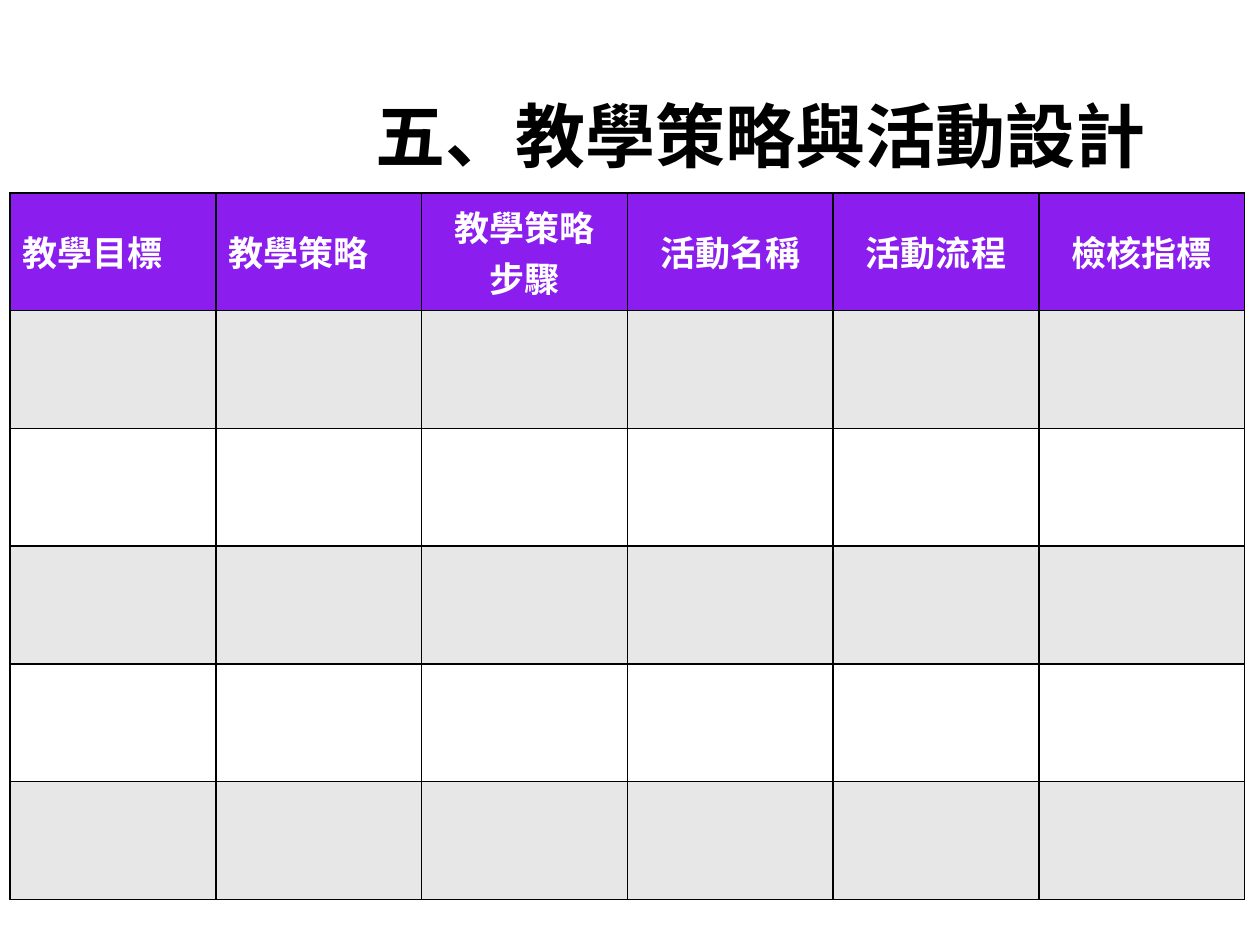
import dataclasses
import typing

import pptx
import pptx.dml.color
import pptx.enum.text
import pptx.oxml
import pptx.oxml.ns
import pptx.util

ALIGN = pptx.enum.text.PP_ALIGN
MIDDLE = pptx.enum.text.MSO_ANCHOR.MIDDLE


@dataclasses.dataclass(frozen=True)
class Theme:
    font: str = "Noto Sans CJK SC"
    ink: str = "000000"
    head: str = "8B1DEE"
    label: str = "FFFFFF"
    bands: tuple[str, str] = ("E7E7E7", "FFFFFF")
    title: int = 40
    text: int = 20
    line: int = 1


@dataclasses.dataclass(frozen=True)
class Box:
    """Shares of the slide's width and height."""
    left: float
    top: float
    width: float
    height: float


@dataclasses.dataclass(frozen=True)
class Head:
    text: str
    align: typing.Any = ALIGN.CENTER


THEME = Theme()
WIDE, HIGH = pptx.util.Inches(10), pptx.util.Inches(7.5)
TITLE = Box(0.207, 0.08, 0.793, 0.125)
GRID = Box(0.008, 0.204, 0.98, 0.748)
ROWS = 6
HEADS = (
    Head("教學目標", ALIGN.LEFT),
    Head("教學策略", ALIGN.LEFT),
    Head("教學策略\n步驟"),
    Head("活動名稱"),
    Head("活動流程"),
    Head("檢核指標"),
)


def place(box: Box) -> tuple[int, int, int, int]:
    return (int(box.left * WIDE), int(box.top * HIGH),
            int(box.width * WIDE), int(box.height * HIGH))


def style(frame: typing.Any, size: int, color: str, align: typing.Any) -> None:
    for para in frame.paragraphs:
        para.alignment = align
        for run in para.runs:
            run.font.size = pptx.util.Pt(size)
            run.font.bold = True
            run.font.name = THEME.font
            run.font.color.rgb = pptx.dml.color.RGBColor.from_string(color)
            # East Asian typeface
            east = pptx.oxml.ns.qn("a:ea")
            run.font._element.makeelement(east)
            node = pptx.oxml.parse_xml(
                f'<a:ea {pptx.oxml.ns.nsdecls("a")} typeface="{THEME.font}"/>')
            run.font._element.find(pptx.oxml.ns.qn("a:latin")).addnext(node)


def paint(cell: typing.Any, color: str) -> None:
    # Borders come before the fill in the cell's properties
    props = cell._tc.get_or_add_tcPr()
    for side in "LRTB":
        props.append(pptx.oxml.parse_xml(
            f'<a:ln{side} {pptx.oxml.ns.nsdecls("a")} '
            f'w="{pptx.util.Pt(THEME.line)}"><a:solidFill>'
            f'<a:srgbClr val="{THEME.ink}"/></a:solidFill></a:ln{side}>'))
    cell.fill.solid()
    cell.fill.fore_color.rgb = pptx.dml.color.RGBColor.from_string(color)


def add_title(slide: typing.Any, text: str) -> None:
    frame = slide.shapes.add_textbox(*place(TITLE)).text_frame
    frame.word_wrap = True
    frame.vertical_anchor = MIDDLE
    frame.text = text
    style(frame, THEME.title, THEME.ink, ALIGN.CENTER)


def add_grid(slide: typing.Any) -> None:
    table = slide.shapes.add_table(ROWS, len(HEADS), *place(GRID)).table
    for col, head in enumerate(HEADS):
        cell = table.cell(0, col)
        cell.text_frame.text = head.text
        cell.vertical_anchor = MIDDLE
        style(cell.text_frame, THEME.text, THEME.label, head.align)
        paint(cell, THEME.head)
        for row in range(1, ROWS):
            paint(table.cell(row, col), THEME.bands[(row - 1) % 2])


def main() -> None:
    deck = pptx.Presentation()
    deck.slide_width, deck.slide_height = WIDE, HIGH
    slide = deck.slides.add_slide(deck.slide_layouts[6])
    add_title(slide, "五、教學策略與活動設計")
    add_grid(slide)
    deck.save("out.pptx")


if __name__ == "__main__":
    main()
